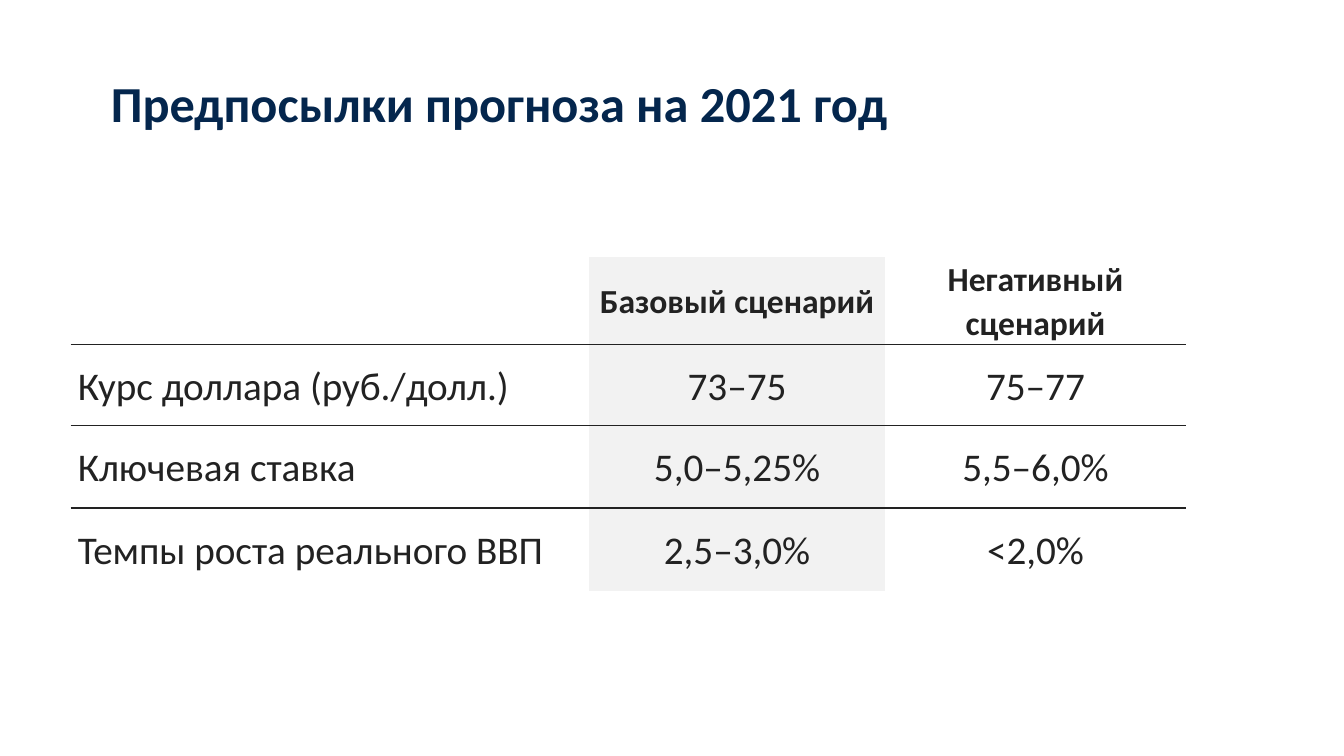
from dataclasses import dataclass

from lxml.etree import SubElement
from pptx import Presentation
from pptx.dml.color import RGBColor
from pptx.enum.text import MSO_ANCHOR, MSO_AUTO_SIZE, PP_ALIGN
from pptx.oxml.ns import qn
from pptx.slide import Slide
from pptx.table import _Cell as Cell
from pptx.text.text import TextFrame
from pptx.util import Cm, Length, Pt

COLORS = {"title": "04264D", "text": "222222", "plain": "FFFFFF", "base": "F2F2F2"}
FONT = "Calibri"
NO_STYLE = "{2D5ABB26-0587-4C30-8999-92F81FD0307C}"


@dataclass(frozen=True)
class Column:
    width: float
    fill: str
    align: PP_ALIGN


@dataclass(frozen=True)
class Row:
    height: float
    texts: tuple[str, str, str]
    size: int = 28
    bold: bool = False


COLUMNS = (
    Column(13.06, "plain", PP_ALIGN.LEFT),
    Column(7.47, "base", PP_ALIGN.CENTER),
    Column(7.57, "plain", PP_ALIGN.CENTER),
)
ROWS = (
    Row(1.93, ("", "Базовый сценарий", "Негативный сценарий"), size=24, bold=True),
    Row(2.03, ("Курс доллара (руб./долл.)", "73–75", "75–77")),
    Row(2.08, ("Ключевая ставка", "5,0–5,25%", "5,5–6,0%")),
    Row(2.08, ("Темпы роста реального ВВП", "2,5–3,0%", "<2,0%")),
)


def write_text(
    frame: TextFrame,
    text: str,
    *,
    size: int,
    color: str,
    bold: bool = False,
    align: PP_ALIGN = PP_ALIGN.LEFT,
    spacing: float | Length = 1.07,
) -> None:
    para = frame.paragraphs[0]
    para.alignment = align
    para.line_spacing = spacing
    span = para.add_run()
    span.text = text
    span.font.name = FONT
    span.font.size = Pt(size)
    span.font.bold = bold
    span.font.color.rgb = RGBColor.from_string(COLORS[color])


def add_border(cell: Cell, side: str) -> None:
    properties = cell._tc.get_or_add_tcPr()
    line = SubElement(properties, qn(f"a:{side}"), w=str(Pt(1)))
    fill = SubElement(line, qn("a:solidFill"))
    SubElement(fill, qn("a:srgbClr"), val=COLORS["text"])
    properties.insert(0, line)


def format_cell(cell: Cell, row: Row, column: Column, text: str) -> None:
    cell.fill.solid()
    cell.fill.fore_color.rgb = RGBColor.from_string(COLORS[column.fill])
    cell.vertical_anchor = MSO_ANCHOR.MIDDLE
    cell.margin_left = cell.margin_right = Cm(0.18)
    cell.margin_top = cell.margin_bottom = 0
    if text:
        write_text(
            cell.text_frame,
            text,
            size=row.size,
            color="text",
            bold=row.bold,
            align=column.align,
        )


def add_title(page: Slide) -> None:
    box = page.shapes.title
    box.left, box.top, box.width, box.height = Cm(2.54), Cm(2.08), Cm(29.49), Cm(1.45)
    frame = box.text_frame
    frame.auto_size = MSO_AUTO_SIZE.NONE
    frame.vertical_anchor = MSO_ANCHOR.MIDDLE
    write_text(
        frame,
        "Предпосылки прогноза на 2021 год",
        size=36,
        color="title",
        bold=True,
        spacing=Pt(30),
    )


def add_scenarios(page: Slide) -> None:
    width = Cm(sum(column.width for column in COLUMNS))
    height = Cm(sum(row.height for row in ROWS))
    box = page.shapes.add_table(
        len(ROWS), len(COLUMNS), Cm(1.78), Cm(6.48), width, height
    )
    table = box.table
    table.first_row = table.horz_banding = False
    table._tbl.tblPr.find(qn("a:tableStyleId")).text = NO_STYLE
    for index, column in enumerate(COLUMNS):
        table.columns[index].width = Cm(column.width)
    for row_index, row in enumerate(ROWS):
        table.rows[row_index].height = Cm(row.height)
        for index, (column, text) in enumerate(zip(COLUMNS, row.texts)):
            cell = table.cell(row_index, index)
            format_cell(cell, row, column, text)
            if row_index < len(ROWS) - 1:
                add_border(cell, "lnB")
            if row_index > 0:
                add_border(cell, "lnT")


def main() -> None:
    deck = Presentation()
    deck.slide_width, deck.slide_height = Cm(33.87), Cm(19.05)
    page = deck.slides.add_slide(deck.slide_layouts[5])
    add_title(page)
    add_scenarios(page)
    deck.save("out.pptx")


if __name__ == "__main__":
    main()
